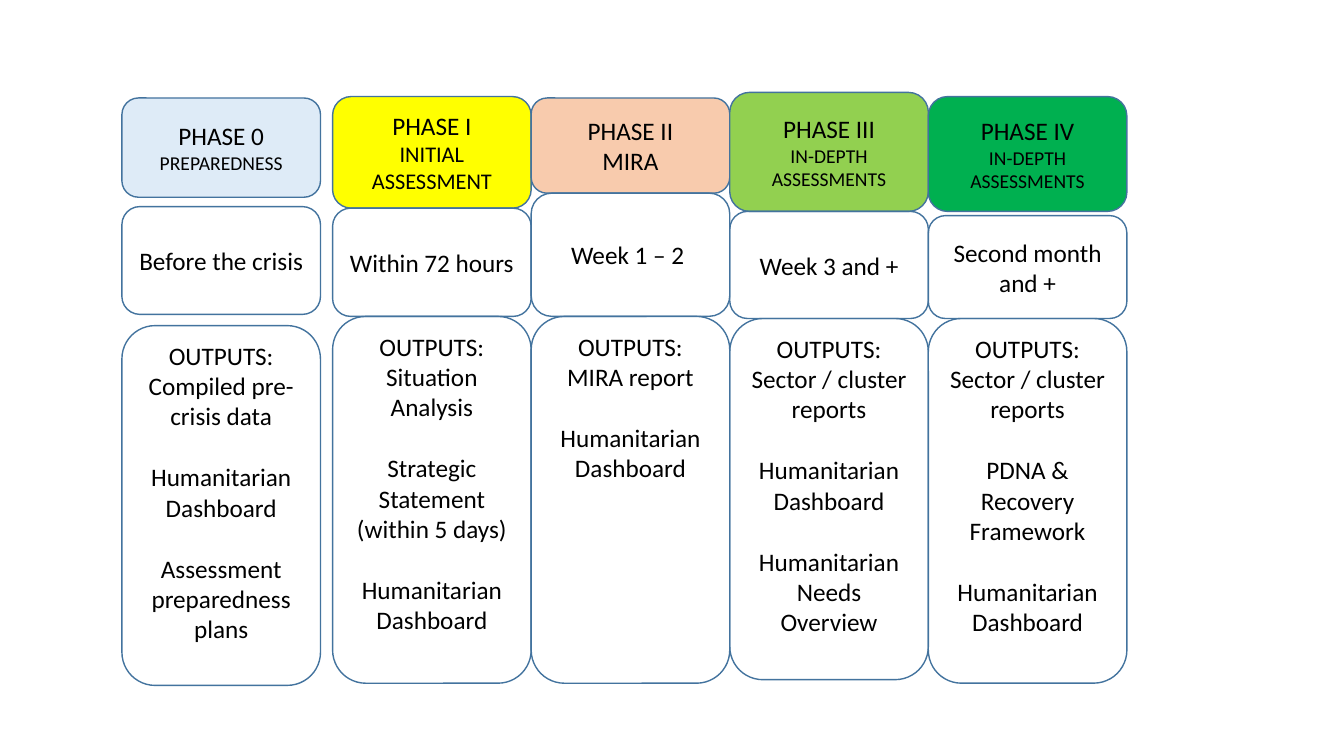
"""Build a slide of five assessment phases, each with its timing and outputs."""
from pptx import Presentation
from pptx.dml.color import RGBColor
from pptx.enum import shapes, text
from pptx.util import Pt

BLACK = RGBColor(0x00, 0x00, 0x00)
EDGE = RGBColor(0x43, 0x73, 0x9E)
PALE = RGBColor(0xDE, 0xEB, 0xF7)
YELLOW = RGBColor(0xFF, 0xFF, 0x00)
PEACH = RGBColor(0xF8, 0xCB, 0xAD)
LIME = RGBColor(0x92, 0xD0, 0x50)
GREEN = RGBColor(0x00, 0xB0, 0x50)

WIDTH = 141.84
FIRST = 87.1
START = 237.6
SIZE = 18
GAP = 22

PHASES = [
    (PALE, "PHASE 0", "PREPAREDNESS", 14, "Before the crisis",
     ["Compiled pre-crisis data", "Humanitarian Dashboard",
      "Assessment preparedness plans"],
     [(70, 70.9), (147.6, 77), (232.6, 257)]),
    (YELLOW, "PHASE I", "INITIAL ASSESSMENT", 16, "Within 72 hours",
     ["Situation Analysis", "Strategic Statement (within 5 days)",
      "Humanitarian Dashboard"],
     [(69, 79.7), (148.7, 77.3), (226, 262)]),
    (PEACH, "PHASE II", "MIRA", 18, "Week 1 – 2 ",
     ["MIRA report", "Humanitarian Dashboard"],
     [(70, 68), (138, 88), (226, 262)]),
    (LIME, "PHASE III", "IN-DEPTH ASSESSMENTS", 14, "Week 3 and +",
     ["Sector / cluster reports", "Humanitarian Dashboard",
      "Humanitarian Needs Overview"],
     [(66, 85), (151, 76.5), (227.5, 258)]),
    (GREEN, "PHASE IV", "IN-DEPTH ASSESSMENTS", 14, "Second month and +",
     ["Sector / cluster reports", "PDNA & Recovery Framework",
      "Humanitarian Dashboard"],
     [(69, 82), (154, 73.5), (227.5, 260.5)]),
]


class Board:
    """Hold the slide and the style of its boxes."""

    def __init__(self, slide, font="Calibri"):
        self.slide = slide
        self.font = font

    def box(self, left, span, lines, fill=None, anchor=text.MSO_ANCHOR.MIDDLE):
        """Add a rounded box with lines given as (words, size, space before)."""
        top, height = span
        shape = self.slide.shapes.add_shape(
            shapes.MSO_SHAPE.ROUNDED_RECTANGLE,
            Pt(left), Pt(top), Pt(WIDTH), Pt(height))
        shape.shadow.inherit = False
        shape.line.color.rgb = EDGE
        shape.line.width = Pt(1)
        if fill is None:
            shape.fill.background()
        else:
            shape.fill.solid()
            shape.fill.fore_color.rgb = fill
        frame = shape.text_frame
        frame.word_wrap = True
        frame.vertical_anchor = anchor
        for i, (words, size, space) in enumerate(lines):
            para = frame.add_paragraph() if i else frame.paragraphs[0]
            para.text = words
            para.alignment = text.PP_ALIGN.CENTER
            para.space_before = Pt(space)
            para.font.name = self.font
            para.font.size = Pt(size)
            para.font.color.rgb = BLACK

    def phase(self, left, fill, name, label, size, time, items, spans):
        """Add one column: heading, timing and outputs."""
        head, mid, low = spans
        self.box(left, head, [(name, SIZE, 0), (label, size, 0)], fill)
        self.box(left, mid, [(time, SIZE, 0)])
        lines = [("OUTPUTS:", SIZE, 0)]
        lines += [(item, SIZE, GAP if i else 0) for i, item in enumerate(items)]
        self.box(left, low, lines, anchor=text.MSO_ANCHOR.TOP)


def main():
    """Build and save the deck."""
    deck = Presentation()
    deck.slide_width, deck.slide_height = Pt(960), Pt(540)
    board = Board(deck.slides.add_slide(deck.slide_layouts[6]))
    for i, phase in enumerate(PHASES):
        left = START + (i - 1) * WIDTH if i else FIRST
        board.phase(left, *phase)
    deck.save("out.pptx")


if __name__ == "__main__":
    main()
